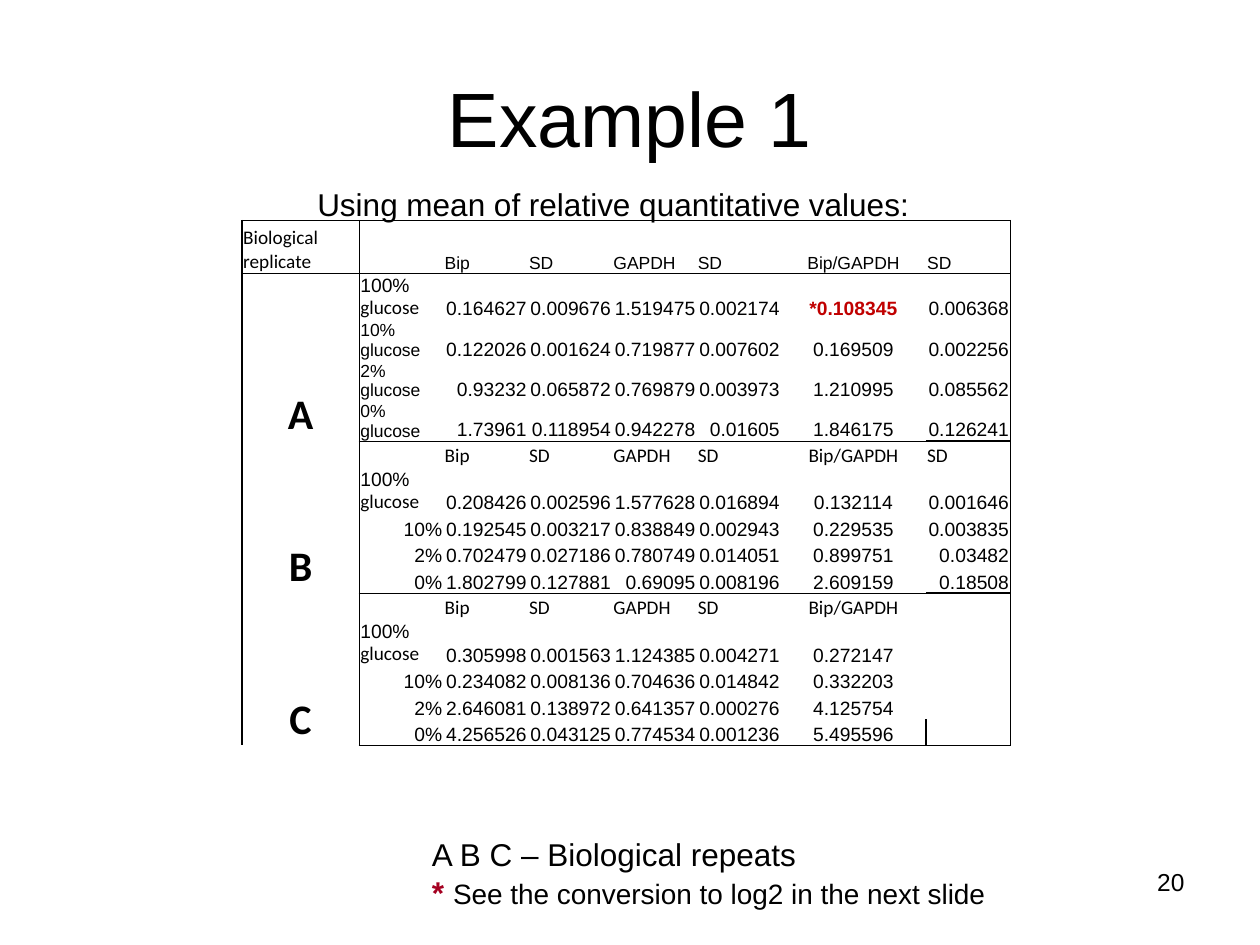
from lxml.etree import SubElement
from pptx import Presentation
from pptx.dml.color import RGBColor
from pptx.enum.text import MSO_ANCHOR, MSO_AUTO_SIZE, PP_ALIGN
from pptx.oxml.ns import qn
from pptx.util import Inches, Pt

BLACK = RGBColor(0, 0, 0)
RED = RGBColor(0xC0, 0, 0)
DARK_RED = RGBColor(0xA5, 0, 0x21)

NO_STYLE = "{2D5ABB26-0587-4C30-8999-92F81FD0307C}"
COLUMN_WIDTHS = [0.93, 0.67, 0.67, 0.67, 0.67, 0.67, 1.15, 0.67]
HEADER_HEIGHT, ROW_HEIGHT = 0.42, 0.21
RATIO_COLUMN, LAST_COLUMN = 6, 7
GROUP_SIZE = 5  # one heading row and four glucose levels

HEADINGS = ["Bip", "SD", "GAPDH", "SD", "Bip/GAPDH", "SD"]
LONG_LEVELS = ["100%\nglucose", "10% glucose", "2% glucose", "0% glucose"]
SHORT_LEVELS = ["100%\nglucose", "10%", "2%", "0%"]
REPLICATES = [
    ("A", HEADINGS, LONG_LEVELS, [
        "0.164627 0.009676 1.519475 0.002174 0.108345* 0.006368",
        "0.122026 0.001624 0.719877 0.007602 0.169509 0.002256",
        "0.93232 0.065872 0.769879 0.003973 1.210995 0.085562",
        "1.73961 0.118954 0.942278 0.01605 1.846175 0.126241"]),
    ("B", HEADINGS, SHORT_LEVELS, [
        "0.208426 0.002596 1.577628 0.016894 0.132114 0.001646",
        "0.192545 0.003217 0.838849 0.002943 0.229535 0.003835",
        "0.702479 0.027186 0.780749 0.014051 0.899751 0.03482",
        "1.802799 0.127881 0.69095 0.008196 2.609159 0.18508"]),
    ("C", HEADINGS[:-1], SHORT_LEVELS, [
        "0.305998 0.001563 1.124385 0.004271 0.272147",
        "0.234082 0.008136 0.704636 0.014842 0.332203",
        "2.646081 0.138972 0.641357 0.000276 4.125754",
        "4.256526 0.043125 0.774534 0.001236 5.495596"]),
]
ROW_COUNT = GROUP_SIZE * len(REPLICATES)


def style_font(font, size, name="Arial", color=BLACK, bold=False):
    font.size, font.name, font.bold = Pt(size), name, bold
    font.color.rgb = color


def set_right_to_left(paragraph):
    """Lay out digits as right-to-left text, which uses the complex-script font."""
    properties = paragraph._p.get_or_add_pPr()
    properties.set("rtl", "1")
    SubElement(properties.find(qn("a:defRPr")), qn("a:cs"), typeface="Arial")
    for span in paragraph.runs:
        SubElement(span._r.get_or_add_rPr(), qn("a:cs"), typeface="Arial")


def fill_cell(cell, text, align=PP_ALIGN.LEFT, size=11, name="Calibri",
              color=BLACK, bold=False):
    cell.text = text
    for paragraph in cell.text_frame.paragraphs:
        paragraph.alignment = align
        style_font(paragraph.font, size, name, color, bold)
        if paragraph.text[:1].isdigit() and "glucose" not in paragraph.text:
            set_right_to_left(paragraph)


def format_cell(cell):
    cell.vertical_anchor = MSO_ANCHOR.BOTTOM
    cell.margin_left = cell.margin_right = cell.margin_top = Inches(0.01)
    cell.margin_bottom = 0
    cell.fill.background()
    if not cell.text:
        cell.text_frame.paragraphs[0]._p.get_or_add_endParaRPr().set("sz", "1100")


def cell_borders(row, column):
    """Return border widths in points for the edges that carry a line."""
    last_row = row == ROW_COUNT - 1
    edges = {}
    if column == 0:
        edges.update(lnL=1, lnR=0.5)
    if column == 1:
        edges["lnL"] = 0.5
    if column == LAST_COLUMN or (last_row and column == RATIO_COLUMN):
        edges["lnR"] = 1
    if last_row and column == LAST_COLUMN:
        edges["lnL"] = 1
    if row <= 1:
        edges["lnT"] = 1
    elif row % GROUP_SIZE == 0 and column > 0:
        edges["lnT"] = 1 if column == LAST_COLUMN else 0.5
    if row == 0 or last_row:
        edges["lnB"] = 1
    elif row % GROUP_SIZE == GROUP_SIZE - 1 and column > 0:
        edges["lnB"] = 1 if column == LAST_COLUMN else 0.5
    return edges


def draw_borders(cell, edges):
    properties = cell._tc.get_or_add_tcPr()
    for edge in ("lnL", "lnR", "lnT", "lnB"):
        line = SubElement(properties, qn(f"a:{edge}"), w=str(Pt(edges.get(edge, 0))))
        if edge in edges:
            fill = SubElement(line, qn("a:solidFill"))
            SubElement(fill, qn("a:srgbClr"), val=str(BLACK))
        else:
            SubElement(line, qn("a:noFill"))


def fill_replicate(table, top, letter, headings, levels, rows):
    heading_font = "Arial" if top == 0 else "Calibri"
    heading_size = 10 if top == 0 else 11
    for column, heading in enumerate(headings, 2):
        align = PP_ALIGN.CENTER if column == RATIO_COLUMN else PP_ALIGN.LEFT
        fill_cell(table.cell(top, column), heading, align, heading_size, heading_font)

    label = table.cell(top + 1, 0)
    label.merge(table.cell(top + GROUP_SIZE - 1, 0))
    fill_cell(label, letter, PP_ALIGN.CENTER, 24, bold=True)

    for row, (level, values) in enumerate(zip(levels, rows), top + 1):
        if level.endswith(" glucose"):
            fill_cell(table.cell(row, 1), level, size=10, name="Arial")
        else:
            align = PP_ALIGN.LEFT if "glucose" in level else PP_ALIGN.RIGHT
            fill_cell(table.cell(row, 1), level, align)
        for column, value in enumerate(values.split(), 2):
            align = PP_ALIGN.CENTER if column == RATIO_COLUMN else PP_ALIGN.RIGHT
            starred = value.endswith("*")
            fill_cell(table.cell(row, column), value, align,
                      color=RED if starred else BLACK, bold=starred)


def add_results_table(page):
    frame = page.shapes.add_table(
        ROW_COUNT, len(COLUMN_WIDTHS), Inches(1.92), Inches(1.75), Inches(6.08),
        Inches(HEADER_HEIGHT + ROW_HEIGHT * (ROW_COUNT - 1)))
    table = frame.table
    table.first_row = table.horz_banding = False
    table._tbl.tblPr.find(qn("a:tableStyleId")).text = NO_STYLE
    for column, width in zip(table.columns, COLUMN_WIDTHS):
        column.width = Inches(width)
    for index, row in enumerate(table.rows):
        row.height = Inches(ROW_HEIGHT if index else HEADER_HEIGHT)

    fill_cell(table.cell(0, 0), "Biological replicate")
    for index, replicate in enumerate(REPLICATES):
        fill_replicate(table, index * GROUP_SIZE, *replicate)
    for row in range(ROW_COUNT):
        for column in range(len(COLUMN_WIDTHS)):
            cell = table.cell(row, column)
            draw_borders(cell, cell_borders(row, column))
            format_cell(cell)


def add_text(page, left, top, width, height, text, size, wrap=False):
    box = page.shapes.add_textbox(Inches(left), Inches(top), Inches(width), Inches(height))
    frame = box.text_frame
    frame.word_wrap = wrap
    frame.auto_size = MSO_AUTO_SIZE.NONE if wrap else MSO_AUTO_SIZE.SHAPE_TO_FIT_TEXT
    paragraph = frame.paragraphs[0]
    paragraph.text = text
    style_font(paragraph.font, size)
    return frame


def add_footnote(page):
    frame = add_text(page, 3.33, 6.58, 4.65, 0.71, "A B C – Biological repeats", 18)
    paragraph = frame.add_paragraph()
    for text, size, color, bold in (
            ("* ", 18, DARK_RED, True),
            ("See the conversion to log2 in the next slide", 16, BLACK, False)):
        span = paragraph.add_run()
        span.text = text
        style_font(span.font, size, color=color, bold=bold)


def add_title(page, text):
    title = page.shapes.title
    title.left, title.top = Inches(0.5), Inches(0.3)
    title.width, title.height = Inches(9), Inches(1.25)
    title.text_frame.text = text
    title.text_frame.vertical_anchor = MSO_ANCHOR.MIDDLE
    paragraph = title.text_frame.paragraphs[0]
    paragraph.alignment = PP_ALIGN.CENTER
    style_font(paragraph.font, 44)


def main():
    deck = Presentation()
    deck.slide_width, deck.slide_height = Inches(10), Inches(7.5)
    page = deck.slides.add_slide(deck.slide_layouts[5])
    add_title(page, "Example 1")
    add_results_table(page)
    add_text(page, 2.42, 1.42, 4.94, 0.4, "Using mean of relative quantitative values:", 18)
    add_footnote(page)
    number = add_text(page, 7.17, 6.83, 2.33, 0.52, "20", 14, wrap=True).paragraphs[0]
    number.alignment = PP_ALIGN.RIGHT
    set_right_to_left(number)
    deck.save("out.pptx")


if __name__ == "__main__":
    main()
